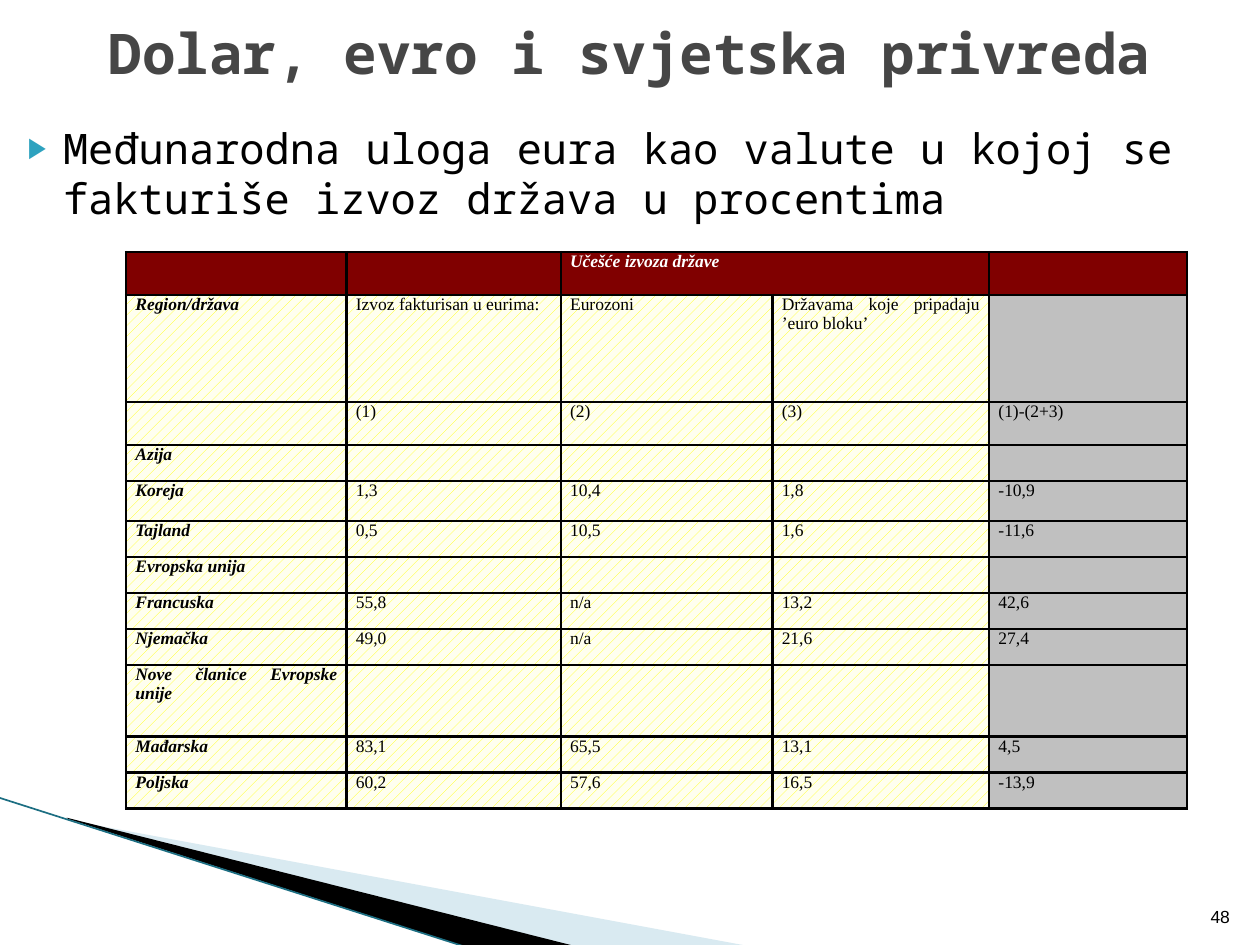
from dataclasses import dataclass

from lxml.etree import SubElement
from pptx import Presentation
from pptx.dml.color import RGBColor
from pptx.enum.dml import MSO_PATTERN
from pptx.enum.shapes import MSO_CONNECTOR
from pptx.enum.text import MSO_ANCHOR, MSO_AUTO_SIZE, PP_ALIGN
from pptx.oxml.ns import qn
from pptx.util import Inches, Pt

BLACK = RGBColor(0x00, 0x00, 0x00)
WHITE = RGBColor(0xFF, 0xFF, 0xFF)
SLATE = RGBColor(0x46, 0x46, 0x46)
TEAL = RGBColor(0x1C, 0x6E, 0x82)
PALE = RGBColor(0xA0, 0xCB, 0xDC)
MAROON = RGBColor(0x80, 0x00, 0x00)
GREY = RGBColor(0xC0, 0xC0, 0xC0)
YELLOW = RGBColor(0xFF, 0xFF, 0x00)
CREAM = RGBColor(0xFF, 0xFF, 0xEF)
BULLET = "2DA2BF"
MONO = "Noto Sans Mono"

COLS = (1.75, 1.7, 1.68, 1.72, 1.57)
LOW = 2 / 7  # seven plain rows share two inches


@dataclass
class Row:
    height: float
    cells: tuple[str, ...]


@dataclass
class Wedge:
    frame: tuple[float, float, float, float]
    points: tuple[tuple[float, float], ...]
    color: RGBColor
    alpha: int = 100


ROWS = (
    Row(0.34, ("", "", "Učešće izvoza države")),
    Row(0.85, ("Region/država", "Izvoz fakturisan u eurima:", "Eurozoni",
               "Državama koje pripadaju ’euro bloku’")),
    Row(0.34, ("", "(1)", "(2)", "(3)", "(1)-(2+3)")),
    Row(LOW, ("Azija",)),
    Row(0.32, ("Koreja", "1,3", "10,4", "1,8", "-10,9")),
    Row(LOW, ("Tajland", "0,5", "10,5", "1,6", "-11,6")),
    Row(LOW, ("Evropska unija",)),
    Row(LOW, ("Francuska", "55,8", "n/a", "13,2", "42,6")),
    Row(LOW, ("Njemačka", "49,0", "n/a", "21,6", "27,4")),
    Row(0.57, ("Nove članice Evropske unije",)),
    Row(LOW, ("Mađarska", "83,1", "65,5", "13,1", "4,5")),
    Row(LOW, ("Poljska", "60,2", "57,6", "16,5", "-13,9")),
)

WEDGES = (
    Wedge((0.78, 5.47, 4.16, 1.58),
          ((0.55, 6.51), (5.95, 7.51), (4.56, 7.51), (0.55, 6.5)), PALE, 40),
    Wedge((-0.06, 6.33, 4.16, 0.92),
          ((0.53, 6.49), (4.57, 7.51), (3.72, 7.52), (0.54, 6.5)), BLACK),
)


def set_font(para, name: str, size: int, color: RGBColor, bold: bool = False) -> None:
    font = para.font
    font.name, font.size, font.bold = name, Pt(size), bold
    font.color.rgb = color


def place(shape, left: float, top: float, width: float, height: float) -> None:
    shape.left, shape.top = Inches(left), Inches(top)
    shape.width, shape.height = Inches(width), Inches(height)


def set_frame(shape, frame: tuple[float, float, float, float]) -> None:
    """Change the frame of a freeform while its outline stays in place."""
    left, top = shape.left, shape.top
    place(shape, *frame)
    props = shape._element.spPr
    for point in props.iter(qn("a:pt")):
        point.set("x", str(int(point.get("x")) + left - shape.left))
        point.set("y", str(int(point.get("y")) + top - shape.top))
    track = props.find(".//" + qn("a:path"))
    track.set("w", str(shape.width))
    track.set("h", str(shape.height))


def draw_wedge(slide, wedge: Wedge) -> None:
    first, *rest = [(Inches(x), Inches(y)) for x, y in wedge.points]
    pen = slide.shapes.build_freeform(*first)
    pen.add_line_segments(rest)
    shape = pen.convert_to_shape()
    set_frame(shape, wedge.frame)
    shape.shadow.inherit = False
    shape.line.fill.background()
    shape.fill.solid()
    shape.fill.fore_color.rgb = wedge.color
    if wedge.alpha < 100:
        color = shape._element.spPr.find(".//" + qn("a:srgbClr"))
        SubElement(color, qn("a:alpha"), val=str(wedge.alpha * 1000))


def add_borders(cell) -> None:
    props = cell._tc.get_or_add_tcPr()
    for spot, side in enumerate(("lnL", "lnR", "lnT", "lnB")):
        line = props.makeelement(qn("a:" + side), {"w": str(Pt(1.5))})
        props.insert(spot, line)
        fill = SubElement(line, qn("a:solidFill"))
        SubElement(fill, qn("a:srgbClr"), val=str(BLACK))


def style_cell(cell, text: str, row: int, col: int) -> None:
    head = row == 0
    cell.margin_left = cell.margin_right = Pt(5.4)
    cell.margin_top = cell.margin_bottom = 0
    para = cell.text_frame.paragraphs[0]
    para.text = text
    para.alignment = PP_ALIGN.JUSTIFY
    strong = head or col == 0
    set_font(para, "Times New Roman", 10, WHITE if head else BLACK, strong)
    para.font.italic = strong
    if head or col == len(COLS) - 1:
        cell.fill.solid()
        cell.fill.fore_color.rgb = MAROON if head else GREY
    else:
        cell.fill.patterned()
        cell.fill.pattern = MSO_PATTERN.PERCENT_20
        cell.fill.fore_color.rgb = YELLOW
        cell.fill.back_color.rgb = CREAM
    add_borders(cell)


def draw_table(slide) -> None:
    height = sum(row.height for row in ROWS)
    table = slide.shapes.add_table(
        len(ROWS), len(COLS), Inches(1), Inches(2),
        Inches(sum(COLS)), Inches(height)).table
    for col, width in enumerate(COLS):
        table.columns[col].width = Inches(width)
    for r, row in enumerate(ROWS):
        table.rows[r].height = Inches(row.height)
        for c in range(len(COLS)):
            text = row.cells[c] if c < len(row.cells) else ""
            style_cell(table.cell(r, c), text, r, c)
    table.cell(0, 2).merge(table.cell(0, 3))


def fill_title(title) -> None:
    place(title, 0, 0, 10, 0.83)
    frame = title.text_frame
    frame.text = "Dolar, evro i svjetska privreda"
    frame.auto_size = MSO_AUTO_SIZE.NONE
    frame.vertical_anchor = MSO_ANCHOR.MIDDLE
    para = frame.paragraphs[0]
    para.alignment = PP_ALIGN.CENTER
    set_font(para, MONO, 32, SLATE, True)


def fill_body(body) -> None:
    place(body, 0, 0.92, 10, 6.58)
    frame = body.text_frame
    frame.text = ("Međunarodna uloga eura kao valute u kojoj se "
                  "fakturiše izvoz država u procentima")
    frame.auto_size = MSO_AUTO_SIZE.NONE
    para = frame.paragraphs[0]
    para.space_before = Pt(0)
    para.line_spacing = 1.0
    props = para._p.get_or_add_pPr()
    props.set("marL", str(Inches(0.4)))
    props.set("indent", str(Inches(-0.28)))
    color = SubElement(props, qn("a:buClr"))
    SubElement(color, qn("a:srgbClr"), val=BULLET)
    SubElement(props, qn("a:buSzPct"), val="68000")
    SubElement(props, qn("a:buChar"), char="▶")
    set_font(para, MONO, 24, BLACK)


def add_number(slide) -> None:
    box = slide.shapes.add_textbox(Inches(9.46), Inches(7.01), Inches(0.4), Inches(0.4))
    frame = box.text_frame
    frame.word_wrap = True
    frame.vertical_anchor = MSO_ANCHOR.BOTTOM
    para = frame.paragraphs[0]
    para.text = "48"
    para.alignment = PP_ALIGN.RIGHT
    set_font(para, "Arial", 10, BLACK)


def main() -> None:
    deck = Presentation()
    deck.slide_width, deck.slide_height = Inches(10), Inches(7.5)
    slide = deck.slides.add_slide(deck.slide_layouts[1])

    # Corner decoration
    for wedge in WEDGES:
        draw_wedge(slide, wedge)
    edge = slide.shapes.add_connector(
        MSO_CONNECTOR.STRAIGHT, Inches(-0.01), Inches(6.33), Inches(3.71), Inches(7.52))
    edge.line.color.rgb = TEAL
    edge.line.width = Pt(0.95)
    SubElement(edge._element.spPr, qn("a:effectLst"))

    # Text and table
    fill_title(slide.shapes.title)
    fill_body(slide.placeholders[1])
    add_number(slide)
    draw_table(slide)

    deck.save("out.pptx")


if __name__ == "__main__":
    main()
